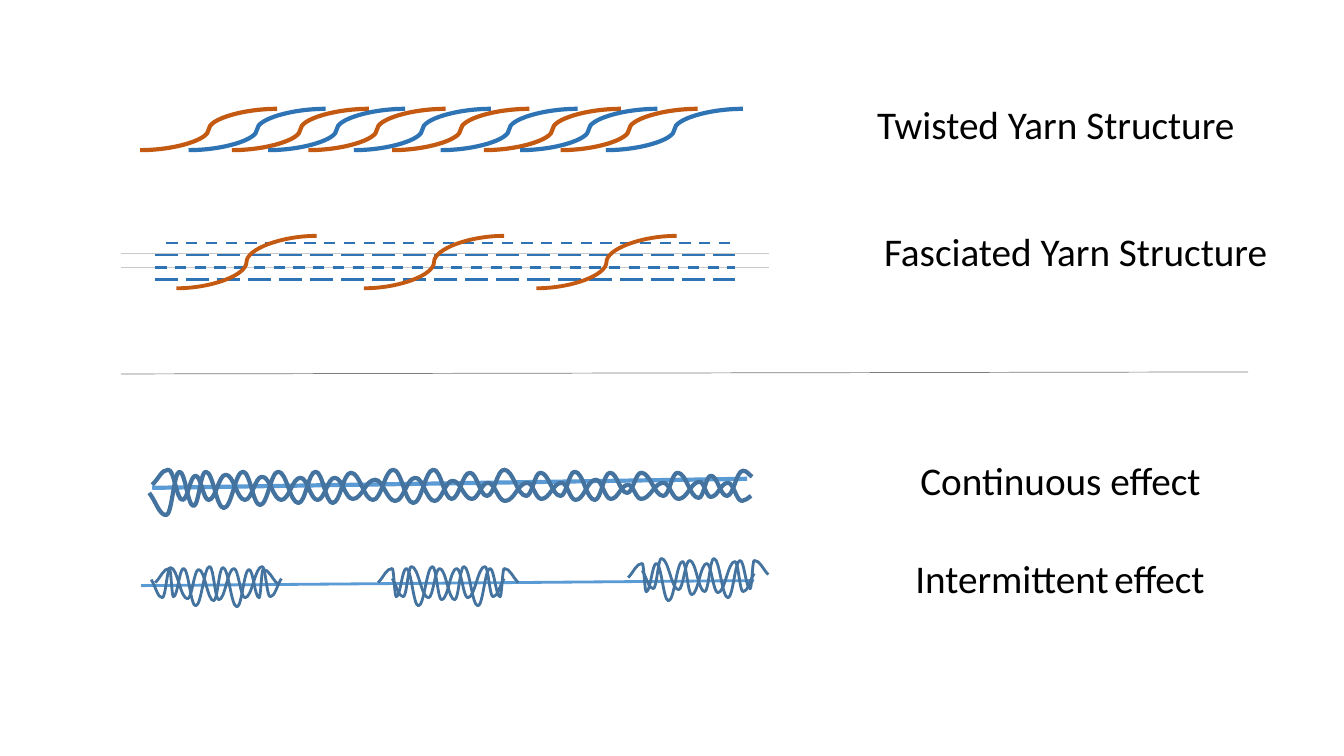
from dataclasses import dataclass

from lxml import etree
from pptx import Presentation
from pptx.dml.color import RGBColor
from pptx.enum.dml import MSO_LINE
from pptx.enum.shapes import MSO_CONNECTOR
from pptx.enum.text import MSO_AUTO_SIZE
from pptx.oxml.ns import qn
from pptx.util import Inches, Pt

STRAIGHT, CURVE = MSO_CONNECTOR.STRAIGHT, MSO_CONNECTOR.CURVE
DASH, LONG_DASH = MSO_LINE.DASH, MSO_LINE.LONG_DASH
FIT_SHAPE = MSO_AUTO_SIZE.SHAPE_TO_FIT_TEXT
BLANK_LAYOUT = 6


@dataclass(frozen=True)
class Theme:
    font: str = "Calibri"
    label_size: float = 28
    gap_size: float = 18
    ink: str = "000000"
    orange: str = "C45911"
    blue: str = "2E74B5"
    core: str = "5B9BD5"
    wave: str = "43739E"
    guide: str = "C9C9C9"
    divider: str = "7C7C7C"


class YarnSlide:
    def __init__(self, page, theme):
        self.page = page
        self.theme = theme

    def group(self):
        return self.page.shapes.add_group_shape().shapes

    def line(self, shapes, start, end, color, width, dash=None, kind=STRAIGHT):
        line = shapes.add_connector(kind, *map(Inches, start + end))
        line.line.color.rgb = RGBColor.from_string(color)
        formats = {"width": Pt(width), "dash_style": dash}
        for name, value in formats.items():
            setattr(line.line, name, value)
        etree.SubElement(line._element.spPr, qn("a:effectLst"))

    def wave(self, shapes, points, width):
        """Draw a smooth wave whose crests and troughs are the points."""
        start, *rest = [(Inches(x), Inches(y)) for x, y in points]
        builder = shapes.build_freeform(*start, scale=1.0)
        builder.add_line_segments(rest, close=False)
        wave = builder.convert_to_shape()
        wave.shadow.inherit = False
        wave.fill.background()
        wave.line.color.rgb = RGBColor.from_string(self.theme.wave)
        wave.line.width = Pt(width)
        self.round_segments(wave)

    def round_segments(self, wave):
        """Turn straight segments into curves that are level at each crest."""
        ease = 0.42
        nodes = list(wave._element.iter(qn("a:pt")))
        ends = [(int(node.get("x")), int(node.get("y"))) for node in nodes]
        last = len(ends) - 1
        for index in range(1, len(ends)):
            (x0, y0), (x1, y1) = ends[index - 1], ends[index]
            dx, dy = ease * (x1 - x0), ease * (y1 - y0)
            handles = [
                (x0 + dx, y0 + (dy if index == 1 else 0)),
                (x1 - dx, y1 - (dy if index == last else 0)),
            ]
            segment = nodes[index].getparent()
            segment.tag = qn("a:cubicBezTo")
            for place, (x, y) in enumerate(handles):
                handle = etree.Element(qn("a:pt"), x=str(round(x)), y=str(round(y)))
                segment.insert(place, handle)

    def label(self, left, top, width, spans):
        box = self.page.shapes.add_textbox(
            Inches(left), Inches(top), Inches(width), Inches(0.57))
        frame = box.text_frame
        frame.word_wrap = False
        frame.auto_size = FIT_SHAPE
        para = frame.paragraphs[0]
        for text, size in spans:
            span = para.add_run()
            span.text = text
            formats = {"name": self.theme.font, "size": Pt(size)}
            for name, value in formats.items():
                setattr(span.font, name, value)
            span.font.color.rgb = RGBColor.from_string(self.theme.ink)


# Crests and troughs of the two strands of the continuous effect
LOWER_STRAND = [
    (1.48, 4.89), (1.65, 5.11), (1.78, 4.68), (1.92, 5.02), (2.04, 4.68),
    (2.22, 5.04), (2.41, 4.68), (2.58, 5.01), (2.76, 4.68), (2.96, 4.99),
    (3.13, 4.68), (3.3, 4.99), (3.48, 4.69), (3.7, 4.96), (3.9, 4.66),
    (4.1, 4.99), (4.3, 4.66), (4.48, 4.95), (4.66, 4.69), (4.83, 4.92),
    (5, 4.66), (5.22, 4.92), (5.36, 4.69), (5.56, 4.92), (5.7, 4.68),
    (5.9, 4.96), (6.05, 4.69), (6.22, 4.89), (6.36, 4.69), (6.58, 4.92),
    (6.72, 4.69), (6.93, 4.94), (7.05, 4.72), (7.21, 4.92), (7.37, 4.67),
    (7.46, 4.73),
]
UPPER_STRAND = [
    (1.51, 4.81), (1.67, 4.66), (1.81, 4.96), (1.94, 4.72), (2.07, 4.96),
    (2.24, 4.71), (2.43, 4.96), (2.6, 4.73), (2.79, 4.96), (2.98, 4.74),
    (3.15, 4.96), (3.32, 4.74), (3.5, 4.95), (3.72, 4.76), (3.92, 4.97),
    (4.12, 4.74), (4.31, 4.97), (4.49, 4.77), (4.68, 4.95), (4.84, 4.79),
    (5.01, 4.97), (5.23, 4.79), (5.37, 4.95), (5.57, 4.79), (5.71, 4.96),
    (5.91, 4.76), (6.06, 4.95), (6.23, 4.81), (6.36, 4.95), (6.58, 4.79),
    (6.73, 4.95), (6.94, 4.78), (7.05, 4.93), (7.22, 4.79), (7.36, 4.97),
    (7.45, 4.92),
]
# One burst of the intermittent effect, measured from its top left corner
BURST_WIDTH = 1.25
BURST = [
    (0, 0.16), (0.14, 0.02), (0.18, 0.3), (0.28, 0.02), (0.4, 0.39), (0.54, 0),
    (0.63, 0.33), (0.78, 0.02), (0.89, 0.31), (1.06, 0), (1.14, 0.3),
    (BURST_WIDTH, 0.12),
]
# Left, top and whether the burst is mirrored
BURST_PLACES = [
    (1.5, 5.63, True), (1.54, 5.62, False), (3.89, 5.62, True),
    (3.75, 5.62, False), (6.37, 5.54, True), (6.23, 5.57, False),
]


def main():
    deck = Presentation()
    deck.slide_width, deck.slide_height = Inches(13.33), Inches(7.5)
    theme = Theme()
    page = deck.slides.add_slide(deck.slide_layouts[BLANK_LAYOUT])
    slide = YarnSlide(page, theme)

    # Continuous effect
    continuous = slide.group()
    slide.line(continuous, (1.51, 4.84), (7.41, 4.75), theme.core, 3)
    for strand in (LOWER_STRAND, UPPER_STRAND):
        slide.wave(continuous, strand, 3)

    # Intermittent effect
    intermittent = slide.group()
    slide.line(intermittent, (1.4, 5.81), (7.48, 5.76), theme.core, 2)
    for left, top, mirrored in BURST_PLACES:
        points = [(left + (BURST_WIDTH - x if mirrored else x), top + y)
                  for x, y in BURST]
        slide.wave(intermittent, points, 2)

    slide.label(9.03, 4.48, 3.02, [("Continuous effect", theme.label_size)])
    slide.label(8.98, 5.45, 3.11, [
        ("Intermittent", theme.label_size), (" ", theme.gap_size),
        ("effect", theme.label_size)])

    # Twisted yarn: the same six fibres, twice
    twisted = slide.group()
    for shift in (0, 2.5):
        for color, lefts in ((theme.orange, (1.39, 2.3, 3.06)),
                             (theme.blue, (1.87, 2.66, 3.51))):
            for left in lefts:
                slide.line(twisted, (left + shift, 1.49), (left + shift + 1.36, 1.08),
                           color, 3, kind=CURVE)
    slide.label(8.6, 0.95, 3.79, [("Twisted Yarn Structure", theme.label_size)])

    # Fasciated yarn: guides, parallel core fibres and wrappers
    fasciated = slide.group()
    for height in (2.65, 2.52):
        slide.line(fasciated, (1.2, height), (7.63, height), theme.guide, 0.75)
    for row, (left, dash) in enumerate(((1.65, DASH), (1.54, LONG_DASH),
                                        (1.54, DASH), (1.54, LONG_DASH))):
        height = 2.41 + 0.12 * row
        slide.line(fasciated, (left, height), (7.29, height), theme.blue, 2, dash)
    for left in (1.75, 3.61, 5.32):
        slide.line(fasciated, (left, 2.86), (left + 1.39, 2.34), theme.orange, 2.75,
                   kind=CURVE)
    slide.label(8.67, 2.21, 4.04, [("Fasciated Yarn Structure", theme.label_size)])

    # Divider between structures and effects
    slide.line(page.shapes, (1.2, 3.71), (12.38, 3.69), theme.divider, 0.5)

    deck.save("out.pptx")


if __name__ == "__main__":
    main()
